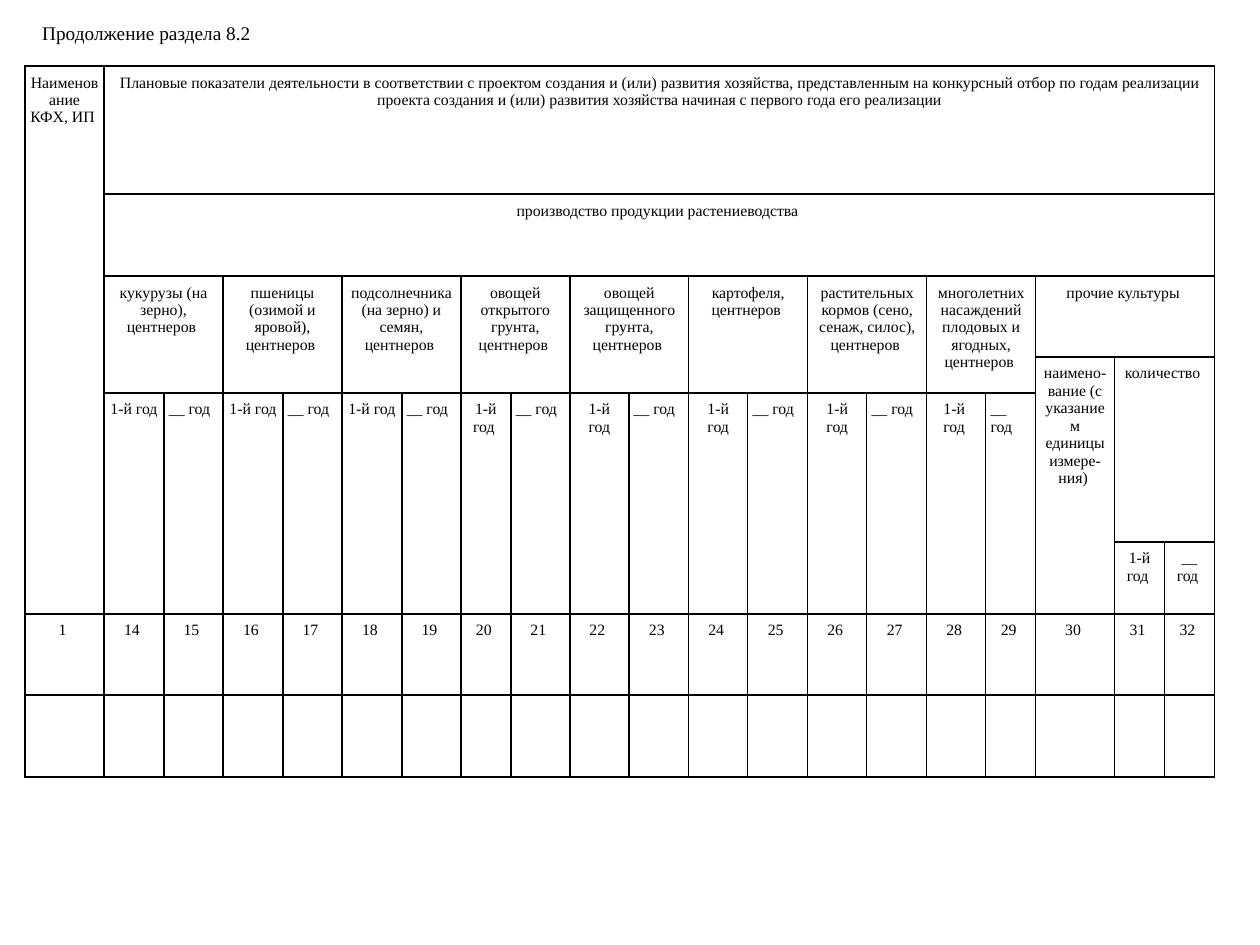
from itertools import pairwise

from lxml import etree
from pptx import Presentation
from pptx.dml.color import RGBColor
from pptx.enum.text import MSO_ANCHOR, MSO_AUTO_SIZE, PP_ALIGN
from pptx.oxml.ns import qn
from pptx.util import Emu, Pt

LEFT, CENTER, RIGHT = PP_ALIGN.LEFT, PP_ALIGN.CENTER, PP_ALIGN.RIGHT
MIDDLE = MSO_ANCHOR.MIDDLE
GROW = MSO_AUTO_SIZE.SHAPE_TO_FIT_TEXT
COLORS = {"ink": "000000"}
FONT = "Times New Roman"
BORDER = Pt(1)

COLUMN_EDGES = [25, 104, 164, 223, 283, 342, 402, 461, 511, 570, 629,
                689, 748, 808, 867, 927, 986, 1036, 1115, 1165, 1215]
ROW_EDGES = [66, 194, 276, 357, 393, 542, 614, 695, 777]
CROPS = [
    ("кукурузы (на зерно), центнеров ", "1-й год "),
    ("пшеницы (озимой и яровой), центнеров ", "1-й год "),
    ("подсолнечника (на зерно) и семян, центнеров ", "1-й год "),
    ("овощей открытого грунта, центнеров ", "1-й год "),
    ("овощей защищенного грунта, центнеров ", "1-й\n год "),
    ("картофеля, центнеров ", "1-й\n год "),
    ("растительных кормов (сено, сенаж, силос), центнеров ", "1-й\n год "),
    ("многолетних насаждений плодовых и ягодных, центнеров ", "1-й \nгод "),
]


def px(value):
    return Emu(round(value * 914400 / 126))


def style_paragraphs(frame, size, align):
    for para in frame.paragraphs:
        para.alignment = align
        para.font.name = FONT
        para.font.size = Pt(size)
        para.font.color.rgb = RGBColor.from_string(COLORS["ink"])


deck = Presentation()
deck.slide_width, deck.slide_height = px(1260), px(945)
page = deck.slides.add_slide(deck.slide_layouts[6])

# Each entry: row, column, row span, column span, text, alignment
entries = [
    (0, 0, 6, 1, "Наименование КФХ, ИП ", CENTER),
    (0, 1, 1, 19, "Плановые показатели деятельности в соответствии с проектом "
     "создания и (или) развития хозяйства, представленным на конкурсный отбор "
     "по годам реализации проекта создания и (или) развития хозяйства начиная "
     "с первого года его реализации", CENTER),
    (1, 1, 1, 19, "производство продукции растениеводства ", CENTER),
    (2, 17, 1, 3, "прочие культуры ", CENTER),
    (3, 17, 3, 1, "наимено-вание (с указанием единицы измере-\nния) ", CENTER),
    (3, 18, 2, 2, "количество ", CENTER),
    (5, 18, 1, 1, "1-й год ", CENTER),
    (5, 19, 1, 1, "__ год ", CENTER),
]
for index, (crop, first_year) in enumerate(CROPS):
    column = 1 + 2 * index
    entries += [
        (2, column, 2, 2, crop, CENTER),
        (4, column, 2, 1, first_year, CENTER),
        (4, column + 1, 2, 1, "__ год", LEFT),
    ]
for column, number in enumerate([1, *range(14, 33)]):
    entries.append((6, column, 1, 1, f"{number} ", CENTER))

frame = page.shapes.add_table(
    len(ROW_EDGES) - 1, len(COLUMN_EDGES) - 1,
    px(COLUMN_EDGES[0]), px(ROW_EDGES[0]),
    px(COLUMN_EDGES[-1] - COLUMN_EDGES[0]), px(ROW_EDGES[-1] - ROW_EDGES[0]))
table = frame.table
table.first_row = table.horz_banding = False
for column, (start, end) in zip(table.columns, pairwise(COLUMN_EDGES)):
    column.width = px(end - start)
for row, (start, end) in zip(table.rows, pairwise(ROW_EDGES)):
    row.height = px(end - start)

for cell in table.iter_cells():
    cell.margin_left = cell.margin_right = px(5)
    cell.margin_top = cell.margin_bottom = px(8)
    properties = cell._tc.get_or_add_tcPr()
    for side in ("lnL", "lnR", "lnT", "lnB"):
        line = etree.SubElement(properties, qn(f"a:{side}"), w=str(BORDER))
        fill = etree.SubElement(line, qn("a:solidFill"))
        etree.SubElement(fill, qn("a:srgbClr"), val=COLORS["ink"])
    cell.fill.background()
    style_paragraphs(cell.text_frame, 9, CENTER)

for row, column, row_span, column_span, text, align in entries:
    cell = table.cell(row, column)
    if row_span * column_span > 1:
        cell.merge(table.cell(row + row_span - 1, column + column_span - 1))
    cell.text = text
    style_paragraphs(cell.text_frame, 9, align)

title = page.shapes.add_textbox(px(15), px(14), px(248), px(37)).text_frame
title.word_wrap = True
title.auto_size = GROW
title.vertical_anchor = MIDDLE
title.text = "Продолжение раздела 8.2"
style_paragraphs(title, 11, RIGHT)

deck.save("out.pptx")
